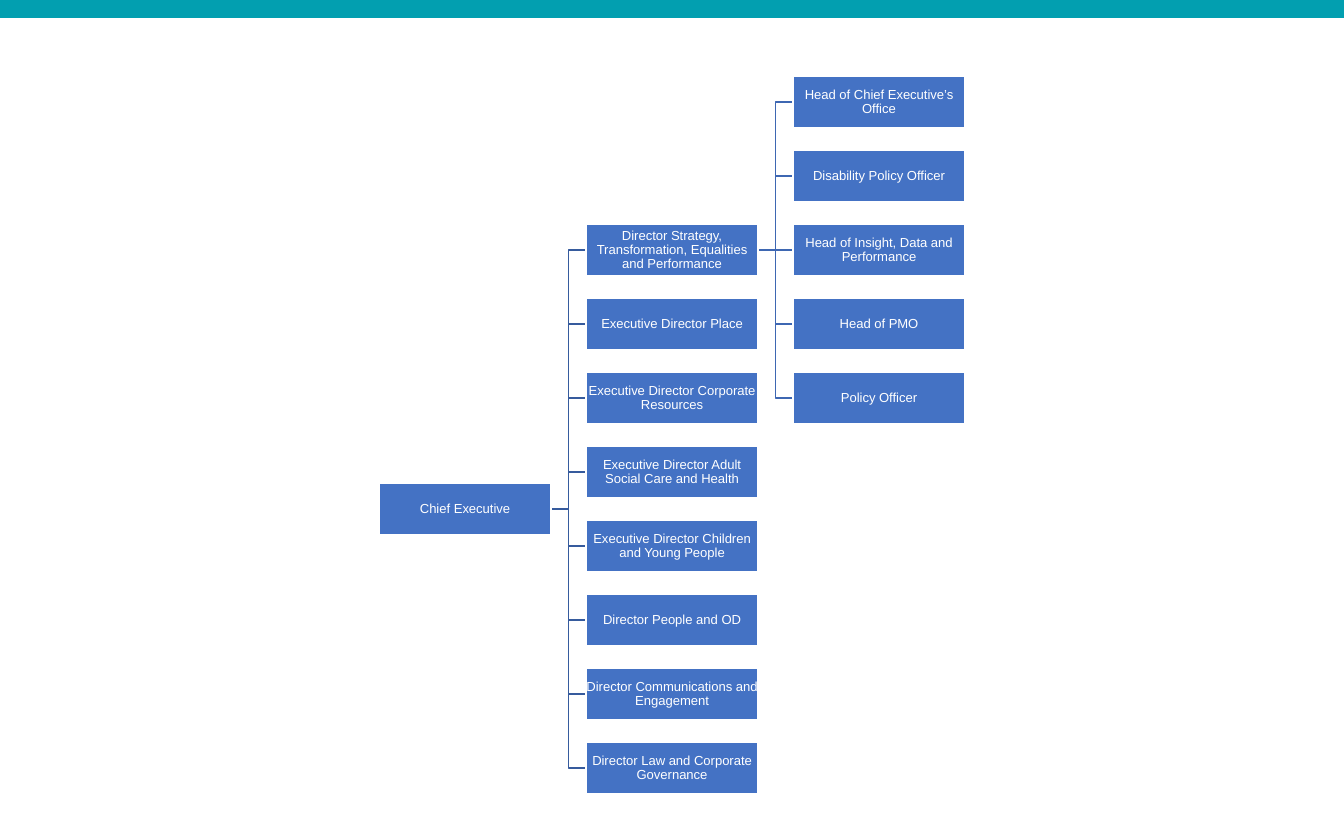
from dataclasses import dataclass

from lxml.etree import SubElement
from pptx import Presentation
from pptx.dml.color import RGBColor
from pptx.enum.shapes import MSO_CONNECTOR, MSO_SHAPE
from pptx.enum.text import MSO_ANCHOR, PP_ALIGN
from pptx.oxml.ns import qn
from pptx.util import Pt

EMU_PER_PX = 914400 / 134.4
SLIDE_WIDTH, SLIDE_HEIGHT = 1344, 840
BOX_WIDTH, BOX_HEIGHT = 172, 52
LEFT, TOP = 379, 76
COLUMN_STEP, ROW_STEP = 207, 74
RIGHT_SIDE, LEFT_SIDE = 3, 1


def px(length):
    return round(length * EMU_PER_PX)


@dataclass(frozen=True)
class Theme:
    band: str = "029FB0"
    box: str = "4472C4"
    text: str = "FFFFFF"
    outline: str = "FFFFFF"
    director_line: str = "365B9D"
    head_line: str = "3E67B2"
    font: str = "Arial"
    text_size: int = 7
    line_width: int = 1


def set_values(target, values):
    for name, value in values.items():
        setattr(target, name, value)


class OrgChart:
    def __init__(self, slide, theme):
        self.slide = slide
        self.theme = theme

    def band(self, width, height):
        band = self.slide.shapes.add_shape(MSO_SHAPE.RECTANGLE, 0, 0, px(width), px(height))
        band.shadow.inherit = False
        band.fill.solid()
        band.fill.fore_color.rgb = RGBColor.from_string(self.theme.band)
        band.line.fill.background()

    def box(self, role, column, row):
        theme = self.theme
        box = self.slide.shapes.add_shape(
            MSO_SHAPE.RECTANGLE,
            px(LEFT + column * COLUMN_STEP), px(TOP + row * ROW_STEP),
            px(BOX_WIDTH), px(BOX_HEIGHT))
        box.shadow.inherit = False
        box.fill.solid()
        box.fill.fore_color.rgb = RGBColor.from_string(theme.box)
        box.line.color.rgb = RGBColor.from_string(theme.outline)
        box.line.width = Pt(theme.line_width)
        frame = box.text_frame
        set_values(frame, {
            "word_wrap": True, "vertical_anchor": MSO_ANCHOR.MIDDLE,
            "margin_left": 0, "margin_right": 0, "margin_top": 0, "margin_bottom": 0})
        paragraph = frame.paragraphs[0]
        set_values(paragraph, {"text": role, "alignment": PP_ALIGN.CENTER, "line_spacing": 0.9})
        set_values(paragraph.font, {"name": theme.font, "size": Pt(theme.text_size)})
        paragraph.font.color.rgb = RGBColor.from_string(theme.text)
        return box

    def branch(self, column, parent_row, child_row, color):
        """Draw a line from a box in the column to a box in the next one."""
        kind = MSO_CONNECTOR.STRAIGHT if parent_row == child_row else MSO_CONNECTOR.ELBOW
        parent_y, child_y = (
            TOP + row * ROW_STEP + BOX_HEIGHT // 2 for row in (parent_row, child_row))
        start_x = LEFT + column * COLUMN_STEP + BOX_WIDTH
        end_x = LEFT + (column + 1) * COLUMN_STEP
        branch = self.slide.shapes.add_connector(
            kind, px(start_x), px(parent_y), px(end_x), px(child_y))
        branch.line.color.rgb = RGBColor.from_string(color)
        branch.line.width = Pt(self.theme.line_width)
        SubElement(branch._element.spPr, qn("a:effectLst"))
        return branch


def main():
    presentation = Presentation()
    set_values(presentation, {"slide_width": px(SLIDE_WIDTH), "slide_height": px(SLIDE_HEIGHT)})
    theme = Theme()
    chart = OrgChart(presentation.slides.add_slide(presentation.slide_layouts[6]), theme)

    # Top band
    chart.band(SLIDE_WIDTH, 18)

    # Roles, from top to bottom in each column
    directors = [
        "Director Strategy, Transformation, Equalities and Performance",
        "Executive Director Place",
        "Executive Director Corporate Resources",
        "Executive Director Adult Social Care and Health",
        "Executive Director Children and Young People",
        "Director People and OD",
        "Director Communications and Engagement",
        "Director Law and Corporate Governance",
    ]
    heads = [
        "Head of Chief Executive’s Office",
        "Disability Policy Officer",
        "Head of Insight, Data and Performance",
        "Head of PMO",
        "Policy Officer",
    ]
    strategy_row = len(heads) // 2
    chief_row = strategy_row + (len(directors) - 1) / 2

    # Branches lie behind the boxes
    director_branches = [
        chart.branch(0, chief_row, row, theme.director_line)
        for row, _ in enumerate(directors, strategy_row)]
    head_branches = [
        chart.branch(1, strategy_row, row, theme.head_line) for row, _ in enumerate(heads)]

    # Boxes
    chief_box = chart.box("Chief Executive", 0, chief_row)
    director_boxes = [chart.box(role, 1, row) for row, role in enumerate(directors, strategy_row)]
    head_boxes = [chart.box(role, 2, row) for row, role in enumerate(heads)]

    # Join the branches to the boxes
    for parent, branches, children in (
            (chief_box, director_branches, director_boxes),
            (director_boxes[0], head_branches, head_boxes)):
        for branch, child in zip(branches, children):
            branch.begin_connect(parent, RIGHT_SIDE)
            branch.end_connect(child, LEFT_SIDE)

    presentation.save("out.pptx")


if __name__ == "__main__":
    main()
